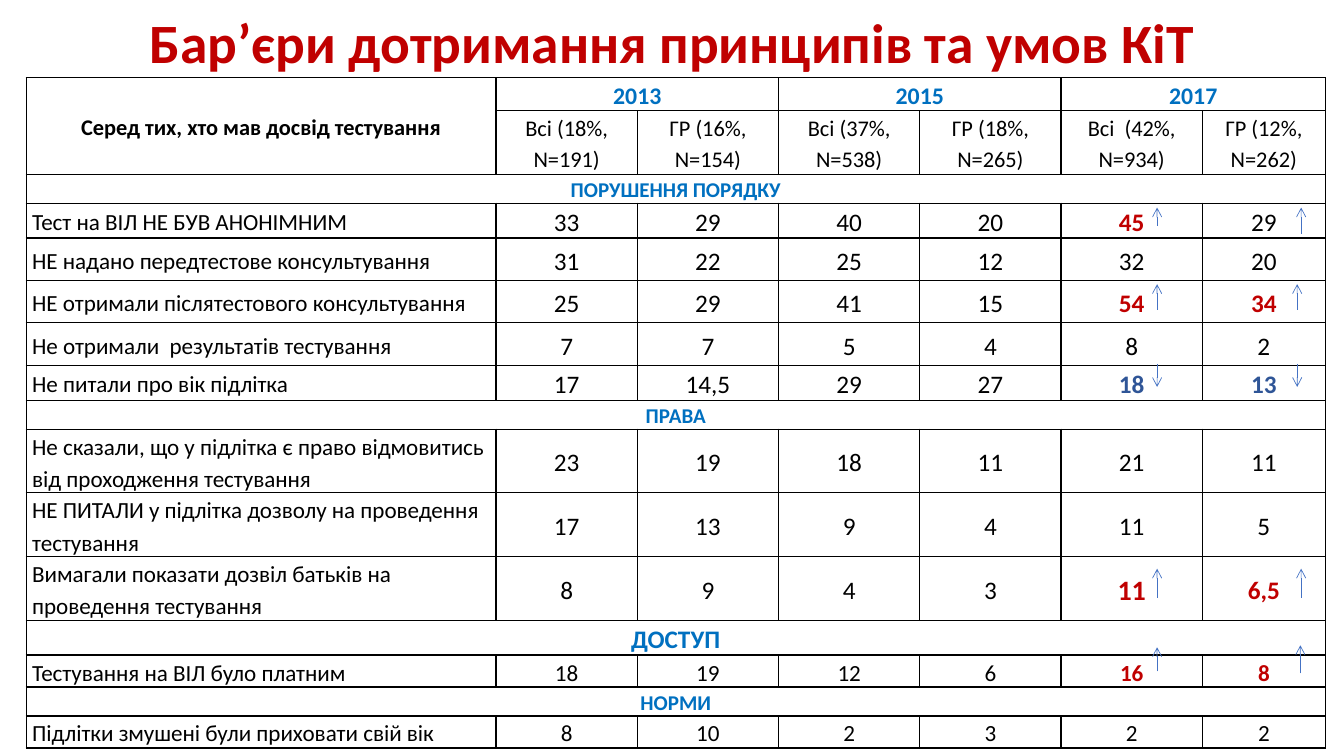
import pptx
import pptx.util
import pptx.dml.color
import pptx.enum.shapes
import pptx.enum.text
import pptx.oxml
import pptx.oxml.ns

Cm, Pt = pptx.util.Cm, pptx.util.Pt
ALIGN = pptx.enum.text.PP_ALIGN
ANCHOR = pptx.enum.text.MSO_ANCHOR
RED, BLUE, NAVY, BLACK = "C00000", "0070C0", "2F5597", "000000"

COL_WIDTHS = [11.84] + [3.56] * 5 + [3.1]
ROW_HEIGHTS = [0.48, 1.6, 0.53, 0.53, 1.07, 1.07, 1.07, 0.53,
               0.53, 1.6, 1.07, 1.6, 0.53, 0.53, 0.53, 0.81]
YEARS = ["2013", "2015", "2017"]
GROUPS = ["Всі (18%, N=191)", "ГР (16%, N=154)", "Всі (37%, N=538)",
          "ГР (18%, N=265)", "Всі  (42%, N=934)", "ГР (12%, N=262)"]

# Section: heading, heading size, value size, rows of label and values
SECTIONS = [
    ("ПОРУШЕННЯ ПОРЯДКУ", 15, 18, [
        ("Тест на ВІЛ НЕ БУВ АНОНІМНИМ", "33 29 40 20 45 29"),
        ("НЕ надано передтестове консультування", "31 22 25 12 32 20"),
        ("НЕ отримали післятестового консультування", "25 29 41 15 54 34"),
        ("Не отримали  результатів тестування", "7 7 5 4 8 2"),
        ("Не питали про вік підлітка", "17 14,5 29 27 18 13")]),
    ("ПРАВА", 15, 18, [
        ("Не сказали, що у підлітка є право відмовитись від проходження тестування",
         "23 19 18 11 21 11"),
        ("НЕ ПИТАЛИ у підлітка дозволу на проведення тестування", "17 13 9 4 11 5"),
        ("Вимагали показати дозвіл батьків на проведення тестування", "8 9 4 3 11 6,5")]),
    ("ДОСТУП", 18, 16.5, [
        ("Тестування на ВІЛ було платним", "18 19 12 6 16 8")]),
    ("НОРМИ", 15, 16.5, [
        ("Підлітки змушені були приховати свій вік", "8 10 2 3 2 2")]),
]

# Highlighted values by (row, column)
HIGHLIGHTS = {
    (3, 5): {"color": RED}, (5, 5): {"color": RED}, (5, 6): {"color": RED},
    (7, 5): {"color": NAVY}, (7, 6): {"color": NAVY},
    (11, 5): {"color": RED, "size": 20}, (11, 6): {"color": RED},
    (13, 5): {"color": RED}, (13, 6): {"color": RED},
}

# Trend arrows: x, tail y, tip y
ARROWS = [
    (29.16, 5.69, 5.23), (32.79, 5.89, 5.23),
    (29.16, 7.8, 7.16), (32.69, 7.8, 7.16),
    (29.16, 9.17, 9.75), (32.69, 9.17, 9.75),
    (29.16, 15.06, 14.33), (32.79, 15.06, 14.33),
    (29.16, 16.92, 16.31), (32.77, 16.97, 16.26),
]


def rgb(value):
    return pptx.dml.color.RGBColor.from_string(value)


def apply(obj, values):
    for name, value in values.items():
        setattr(obj, name, value)


class SlideBuilder:
    font = "Calibri"
    arrow_color = "4472C4"

    def __init__(self, s):
        self.s = s

    def text(self, tf, text, size, color=BLACK, bold=False,
             align=ALIGN.CENTER, spacing=1.15):
        p = tf.paragraphs[0]
        apply(p, {"alignment": align, "line_spacing": spacing})
        r = p.add_run()
        r.text = text
        apply(r.font, {"name": self.font, "size": Pt(size), "bold": bold})
        r.font.color.rgb = rgb(color)

    def title(self, text, x, y, w, h):
        sp = self.s.shapes.add_textbox(Cm(x), Cm(y), Cm(w), Cm(h))
        tf = sp.text_frame
        apply(tf, {"word_wrap": True, "vertical_anchor": ANCHOR.MIDDLE})
        self.text(tf, text, 39.6, RED, True, spacing=0.9)

    def table(self, x, y, height):
        frame = self.s.shapes.add_table(
            len(ROW_HEIGHTS), len(COL_WIDTHS), Cm(x), Cm(y),
            Cm(sum(COL_WIDTHS)), Cm(height))
        tbl = frame.table
        apply(tbl, {"first_row": False, "horz_banding": False})
        for col, width in zip(tbl.columns, COL_WIDTHS):
            col.width = Cm(width)
        for row, row_height in zip(tbl.rows, ROW_HEIGHTS):
            row.height = Cm(row_height)
        frame.height = Cm(height)
        for cell in tbl.iter_cells():
            self.style_cell(cell)
        return tbl

    def style_cell(self, cell):
        apply(cell, {"margin_left": Cm(0.15), "margin_right": Cm(0.15),
                     "margin_top": 0, "margin_bottom": 0,
                     "vertical_anchor": ANCHOR.MIDDLE})
        tc_pr = cell._tc.get_or_add_tcPr()
        for side in "LRTB":
            tc_pr.append(pptx.oxml.parse_xml(
                f'<a:ln{side} {pptx.oxml.ns.nsdecls("a")} w="12700"><a:solidFill>'
                f'<a:srgbClr val="{BLACK}"/></a:solidFill></a:ln{side}>'))
        cell.fill.solid()
        cell.fill.fore_color.rgb = rgb("FFFFFF")

    def arrow(self, x, y1, y2):
        cxn = self.s.shapes.add_connector(
            pptx.enum.shapes.MSO_CONNECTOR.STRAIGHT, Cm(x), Cm(y1), Cm(x), Cm(y2))
        cxn.line.width = Pt(0.5)
        cxn.line.color.rgb = rgb(self.arrow_color)
        ns = pptx.oxml.ns.nsdecls("a")
        sp_pr = cxn._element.spPr
        sp_pr.find(pptx.oxml.ns.qn("a:ln")).append(
            pptx.oxml.parse_xml(f'<a:tailEnd {ns} type="arrow"/>'))
        sp_pr.append(pptx.oxml.parse_xml(f'<a:effectLst {ns}/>'))


def fill_table(b, tbl):
    # Header rows
    head = tbl.cell(0, 0)
    head.merge(tbl.cell(1, 0))
    b.text(head.text_frame, "Серед тих, хто мав досвід тестування", 16, bold=True)
    for i, year in enumerate(YEARS):
        cell = tbl.cell(0, 1 + 2 * i)
        cell.merge(tbl.cell(0, 2 + 2 * i))
        cell.vertical_anchor = ANCHOR.TOP
        b.text(cell.text_frame, year, 17, BLUE, True)
    for c, group in enumerate(GROUPS, 1):
        b.text(tbl.cell(1, c).text_frame, group, 16)

    # Section headings and their rows
    r = 2
    for heading, heading_size, value_size, rows in SECTIONS:
        cell = tbl.cell(r, 0)
        cell.merge(tbl.cell(r, len(COL_WIDTHS) - 1))
        b.text(cell.text_frame, heading, heading_size, BLUE, True)
        for r, (label, values) in enumerate(rows, r + 1):
            b.text(tbl.cell(r, 0).text_frame, label, 16.5, align=ALIGN.LEFT)
            for c, value in enumerate(values.split(), 1):
                style = {"size": value_size, "bold": (r, c) in HIGHLIGHTS}
                style.update(HIGHLIGHTS.get((r, c), {}))
                b.text(tbl.cell(r, c).text_frame, value, **style)
        r += 1
    tbl.cell(2, 0).vertical_anchor = ANCHOR.TOP


def main():
    prs = pptx.Presentation()
    apply(prs, {"slide_width": Cm(33.87), "slide_height": Cm(19.05)})
    b = SlideBuilder(prs.slides.add_slide(prs.slide_layouts[6]))
    b.title("Бар’єри дотримання принципів та умов КіТ", 2.33, 0.58, 29.21, 1.14)
    fill_table(b, b.table(0.66, 1.96, 16.84))
    for x, tail, tip in ARROWS:
        b.arrow(x, tail, tip)
    prs.save("out.pptx")


if __name__ == "__main__":
    main()
